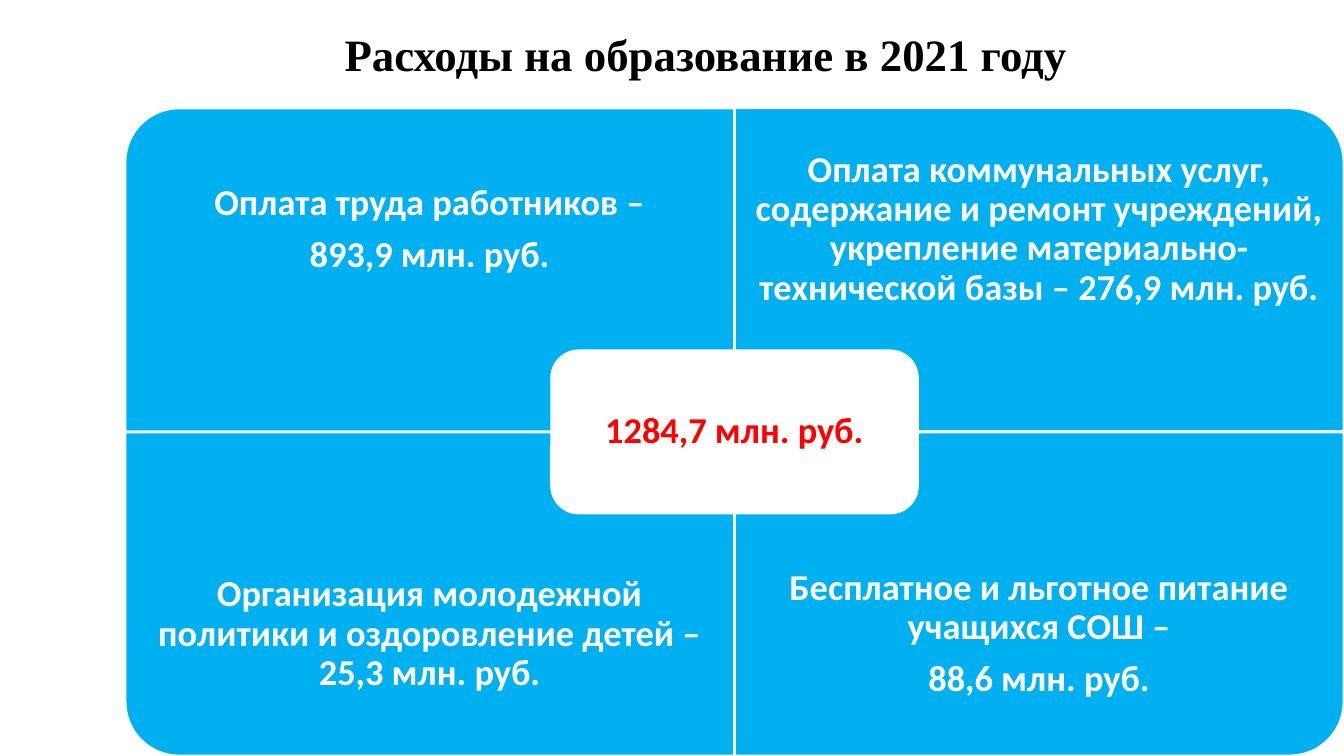
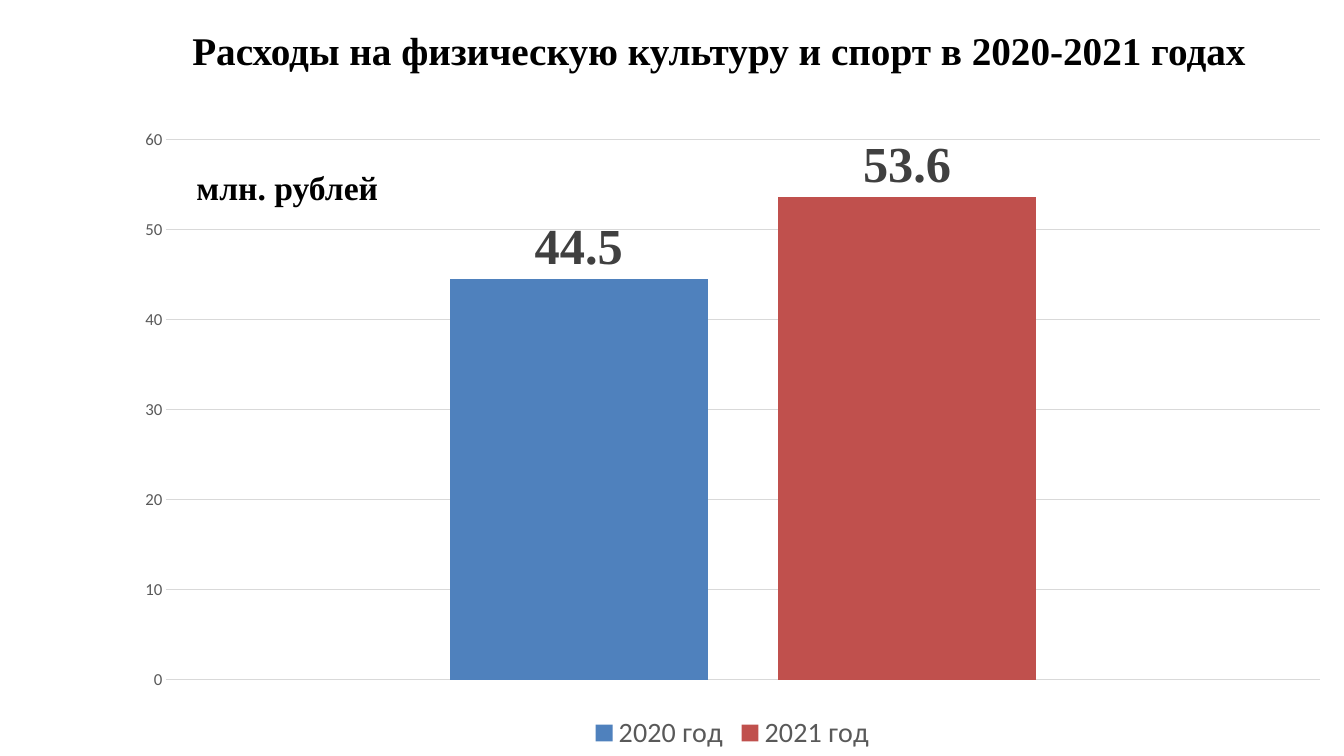
from pptx import Presentation
from pptx.chart.data import CategoryChartData
from pptx.dml.color import RGBColor
from pptx.enum.chart import XL_CHART_TYPE, XL_LABEL_POSITION, XL_LEGEND_POSITION, XL_TICK_MARK
from pptx.enum.shapes import MSO_SHAPE
from pptx.enum.text import MSO_ANCHOR, PP_ALIGN
from pptx.util import Inches, Pt

WHITE = RGBColor(0xFF, 0xFF, 0xFF)
BLACK = RGBColor(0x00, 0x00, 0x00)
RED = RGBColor(0xFF, 0x00, 0x00)
SKY = RGBColor(0x00, 0xB0, 0xF0)
BAR_BLUE = RGBColor(0x4F, 0x81, 0xBD)
BAR_RED = RGBColor(0xC0, 0x50, 0x4D)
AXIS_GREY = RGBColor(0x59, 0x59, 0x59)
LABEL_GREY = RGBColor(0x40, 0x40, 0x40)
GRID_GREY = RGBColor(0xD9, 0xD9, 0xD9)
SERIF, SANS = "Times New Roman", "Calibri"

SLIDE_W, SLIDE_H = 13.33, 7.5

EDUCATION_TITLE = "Расходы на образование в 2021 году"
EDUCATION_TOTAL = "1284,7 млн. руб."
# column, row, rotation that turns the round corner outwards, paragraphs
EDUCATION_PARTS = [
    (0, 0, 270, ["Оплата труда работников –", "893,9 млн. руб."]),
    (1, 0, 0, ["Оплата коммунальных услуг, содержание и ремонт учреждений, "
               "укрепление материально-технической базы – 276,9 млн. руб."]),
    (0, 1, 180, ["Организация молодежной политики и оздоровление детей – "
                 "25,3 млн. руб."]),
    (1, 1, 90, ["Бесплатное и льготное питание учащихся СОШ –", "88,6 млн. руб."]),
]

SPORT_TITLE = "Расходы на физическую культуру и спорт в 2020-2021 годах"
SPORT_UNIT = "млн. рублей"
SPORT_SERIES = [("2020 год", 44.5, BAR_BLUE), ("2021 год", 53.6, BAR_RED)]

PANEL_TEXT = dict(size=26, inset=(0.2, 0.2), line_spacing=0.9, space_after=9.1)


def style_font(font, name, size, color, bold=False):
    font.name, font.size, font.bold = name, Pt(size), bold
    font.color.rgb = color


def write(sp, paragraphs, size, font=SANS, color=WHITE, align=PP_ALIGN.CENTER,
          anchor=MSO_ANCHOR.MIDDLE, inset=(0.1, 0.05), line_spacing=None,
          space_after=None):
    """Fill a shape or text box with bold paragraphs."""
    tf = sp.text_frame
    tf.word_wrap = True
    tf.vertical_anchor = anchor
    tf.margin_left = tf.margin_right = Inches(inset[0])
    tf.margin_top = tf.margin_bottom = Inches(inset[1])
    for i, text in enumerate(paragraphs):
        p = tf.paragraphs[0] if i == 0 else tf.add_paragraph()
        p.alignment = align
        if line_spacing:
            p.line_spacing = line_spacing
        if space_after:
            p.space_after = Pt(space_after)
        r = p.add_run()
        r.text = text
        style_font(r.font, font, size, color, bold=True)


def add_text(slide, box, paragraphs, **fmt):
    sp = slide.shapes.add_textbox(*map(Inches, box))
    write(sp, paragraphs, **fmt)


def add_title(slide, text, left, height, size):
    add_text(slide, (left, 0, SLIDE_W - left, height), [text], size=size,
             font=SERIF, color=BLACK, inset=(0.12, 0.06))


def add_panel(slide, kind, box, fill, rotation=0):
    """Add a white-edged shape that covers box after it has been rotated."""
    x, y, w, h = box
    if rotation % 180:
        x, y, w, h = x + (w - h) / 2, y + (h - w) / 2, h, w
    sp = slide.shapes.add_shape(kind, *map(Inches, (x, y, w, h)))
    sp.rotation = rotation
    sp.shadow.inherit = False
    sp.fill.solid()
    sp.fill.fore_color.rgb = fill
    sp.line.color.rgb = WHITE
    sp.line.width = Pt(2)
    return sp


def build_education(slide):
    add_title(slide, EDUCATION_TITLE, left=0.67, height=1.07, size=32)
    left, top = 1.24, 1.07
    w, h = (SLIDE_W - left) / 2, (SLIDE_H - top) / 2
    text_h = h * 0.75
    total_w, total_h = w * 0.6, h * 0.5
    for col, row, rotation, paragraphs in EDUCATION_PARTS:
        x, y = left + col * w, top + row * h
        add_panel(slide, MSO_SHAPE.ROUND_1_RECTANGLE, (x, y, w, h), SKY, rotation)
        add_text(slide, (x, y + row * (h - text_h), w, text_h), paragraphs, **PANEL_TEXT)
    total_box = (left + w - total_w / 2, top + h - total_h / 2, total_w, total_h)
    total = add_panel(slide, MSO_SHAPE.ROUNDED_RECTANGLE, total_box, WHITE)
    write(total, [EDUCATION_TOTAL], size=26, color=RED, inset=(0.11, 0.11),
          line_spacing=0.9)


def add_sport_chart(slide, box):
    data = CategoryChartData()
    data.categories = ["1"]
    for name, value, _ in SPORT_SERIES:
        data.add_series(name, [value])
    chart = slide.shapes.add_chart(XL_CHART_TYPE.COLUMN_CLUSTERED,
                                   *map(Inches, box), data).chart
    style_font(chart.font, SANS, 10, BLACK)
    chart.has_title = False
    chart.has_legend = True
    chart.legend.position = XL_LEGEND_POSITION.BOTTOM
    chart.legend.include_in_layout = False
    style_font(chart.legend.font, SANS, 20, AXIS_GREY)

    chart.category_axis.visible = False
    axis = chart.value_axis
    axis.minimum_scale, axis.maximum_scale, axis.major_unit = 0, 60, 10
    axis.major_tick_mark = axis.minor_tick_mark = XL_TICK_MARK.NONE
    axis.format.line.fill.background()
    style_font(axis.tick_labels.font, SANS, 12, AXIS_GREY)
    grid = axis.major_gridlines.format.line
    grid.color.rgb = GRID_GREY
    grid.width = Pt(0.75)

    plot = chart.plots[0]
    plot.gap_width, plot.overlap = 219, -27
    plot.vary_by_categories = False
    for series, (_, _, color) in zip(plot.series, SPORT_SERIES):
        series.format.fill.solid()
        series.format.fill.fore_color.rgb = color
        labels = series.data_labels
        labels.show_value = True
        labels.position = XL_LABEL_POSITION.OUTSIDE_END
        style_font(labels.font, SERIF, 36, LABEL_GREY, bold=True)


def build_sport(slide):
    add_title(slide, SPORT_TITLE, left=0.93, height=0.98, size=28)
    add_sport_chart(slide, (1.2, 1.16, SLIDE_W - 1.2, SLIDE_H - 1.16))
    add_text(slide, (1.85, 1.61, 2.95, 0.5), [SPORT_UNIT], size=24, font=SERIF,
             color=BLACK, align=PP_ALIGN.LEFT, anchor=MSO_ANCHOR.TOP)


def main():
    prs = Presentation()
    prs.slide_width, prs.slide_height = Inches(SLIDE_W), Inches(SLIDE_H)
    for build in (build_education, build_sport):
        build(prs.slides.add_slide(prs.slide_layouts[6]))
    prs.save("out.pptx")


if __name__ == "__main__":
    main()
